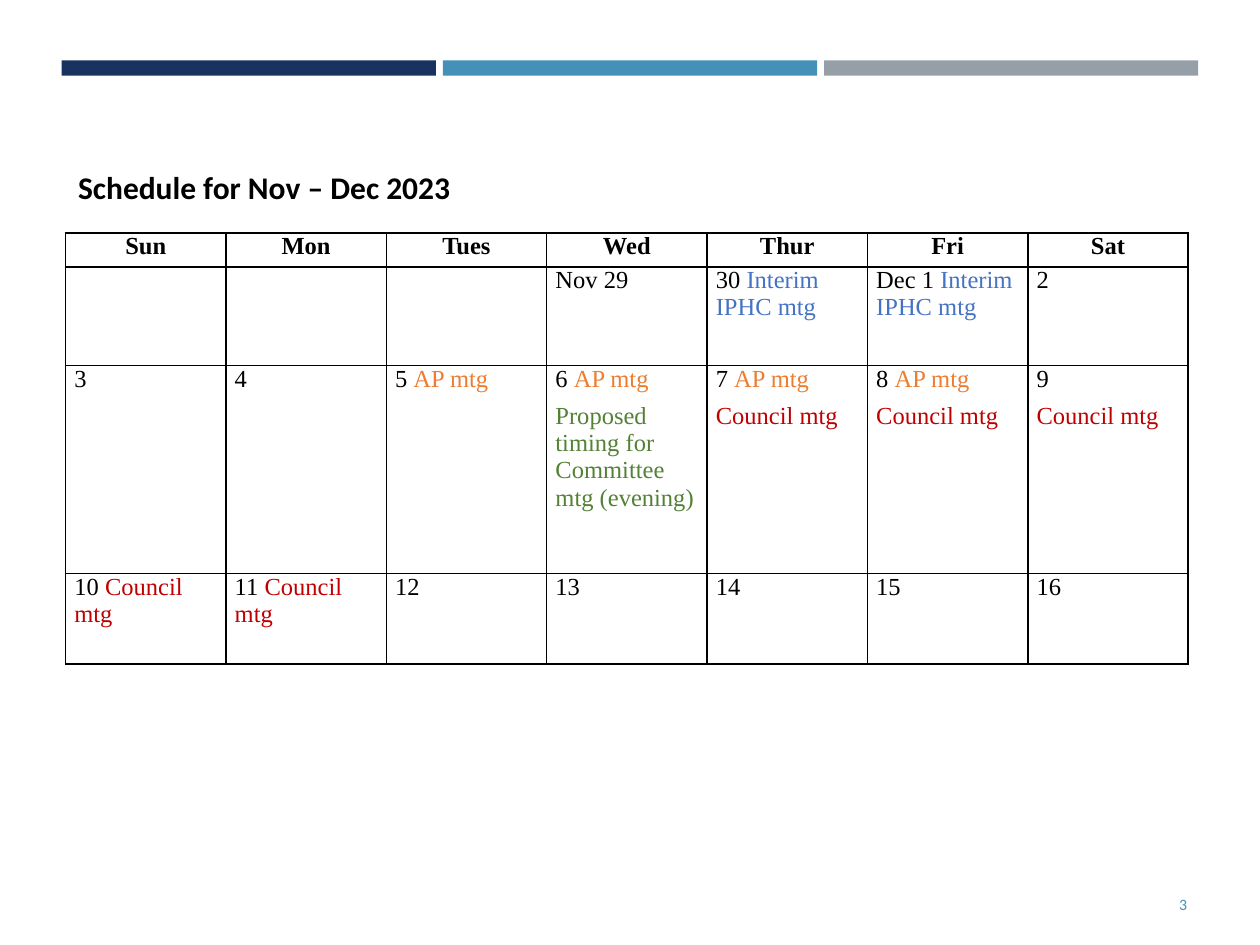
"""Build the meeting schedule slide for Nov – Dec 2023."""
from lxml.etree import fromstring
from pptx import Presentation
from pptx.dml.color import RGBColor
from pptx.enum.shapes import MSO_SHAPE
from pptx.enum.text import MSO_ANCHOR, MSO_AUTO_SIZE, PP_ALIGN
from pptx.util import Inches, Pt

BLACK, NAVY, TEAL, GREY = "000000", "1A3260", "4590B8", "969FA7"
BLUE, ORANGE, GREEN, RED = "4472C4", "ED7D31", "538135", "C00000"
SERIF, SANS = "Times New Roman", "Calibri"


def paint(hue):
    return RGBColor.from_string(hue)


def write(para, text, size, face, hue=BLACK, bold=False):
    run = para.add_run()
    run.text = text
    run.font.size, run.font.name, run.font.bold = Pt(size), face, bold
    run.font.color.rgb = paint(hue)


deck = Presentation()
deck.slide_width, deck.slide_height = Inches(10), Inches(7.5)
slide = deck.slides.add_slide(deck.slide_layouts[5])

for col, hue in enumerate((NAVY, TEAL, GREY)):
    bar = slide.shapes.add_shape(
        MSO_SHAPE.RECTANGLE, Inches(0.49 + 3.025 * col), Inches(0.48),
        Inches(2.97), Inches(0.12))
    bar.shadow.inherit = False
    bar.fill.solid()
    bar.fill.fore_color.rgb = paint(hue)
    bar.line.fill.background()

title = slide.shapes.title
title.left, title.top = Inches(0.52), Inches(1.28)
title.width, title.height = Inches(3.59), Inches(0.4)
frame = title.text_frame
frame.word_wrap = False
frame.auto_size = MSO_AUTO_SIZE.SHAPE_TO_FIT_TEXT
frame.vertical_anchor = MSO_ANCHOR.TOP
para = frame.paragraphs[0]
para.alignment = PP_ALIGN.LEFT
write(para, "Schedule for Nov – Dec 2023", 18, SANS, bold=True)

page = slide.shapes.add_textbox(
    Inches(8.66), Inches(6.98), Inches(0.86), Inches(0.4)).text_frame
page.word_wrap = True
page.vertical_anchor = MSO_ANCHOR.MIDDLE
para = page.paragraphs[0]
para.alignment, para.space_after = PP_ALIGN.RIGHT, Pt(6)
write(para, "3", 9, SANS, TEAL)

halibut = ("Interim IPHC mtg", BLUE)
panel = ("AP mtg", ORANGE)
council = ("Council mtg", RED)
evening = ("Proposed timing for Committee mtg (evening)", GREEN)
days = ("Sun", "Mon", "Tues", "Wed", "Thur", "Fri", "Sat")
weeks = [
    [[[(day, BLACK)]] for day in days],
    [[], [], [], [[("Nov 29", BLACK)]], [[("30 ", BLACK), halibut]],
     [[("Dec 1 ", BLACK), halibut]], [[("2", BLACK)]]],
    [[[("3", BLACK)]], [[("4", BLACK)]], [[("5 ", BLACK), panel]],
     [[("6 ", BLACK), panel], [evening]],
     [[("7 ", BLACK), panel], [council]],
     [[("8 ", BLACK), panel], [council]],
     [[("9", BLACK)], [council]]],
    [[[("10 ", BLACK), council]], [[("11 ", BLACK), council]]]
    + [[[(str(day), BLACK)]] for day in range(12, 17)],
]
highs = (0.27, 0.78, 1.65, 0.72)
wide = 8.91

grid = slide.shapes.add_table(
    len(weeks), len(days), Inches(0.52), Inches(1.85),
    Inches(wide), Inches(sum(highs))).table
grid.first_row = grid.horz_banding = False
for col in grid.columns:
    col.width = Inches(wide / len(days))
for row, high in zip(grid.rows, highs):
    row.height = Inches(high)

space = "http://schemas.openxmlformats.org/drawingml/2006/main"
for row, week in enumerate(weeks):
    for col, lines in enumerate(week):
        cell = grid.cell(row, col)
        cell.margin_left = cell.margin_right = Inches(0.07)
        cell.margin_top = cell.margin_bottom = 0
        cell.fill.background()
        props = cell._tc.get_or_add_tcPr()
        for spot, side in enumerate("LRTB"):
            props.insert(spot, fromstring(
                f'<a:ln{side} xmlns:a="{space}" w="12700"><a:solidFill>'
                f'<a:srgbClr val="{BLACK}"/></a:solidFill></a:ln{side}>'))
        frame = cell.text_frame
        for place, line in enumerate(lines):
            para = frame.add_paragraph() if place else frame.paragraphs[0]
            if row:
                para.space_after = Pt(6)
            else:
                para.alignment = PP_ALIGN.CENTER
            for text, hue in line:
                write(para, text, 14, SERIF, hue, row == 0)

deck.save("out.pptx")
